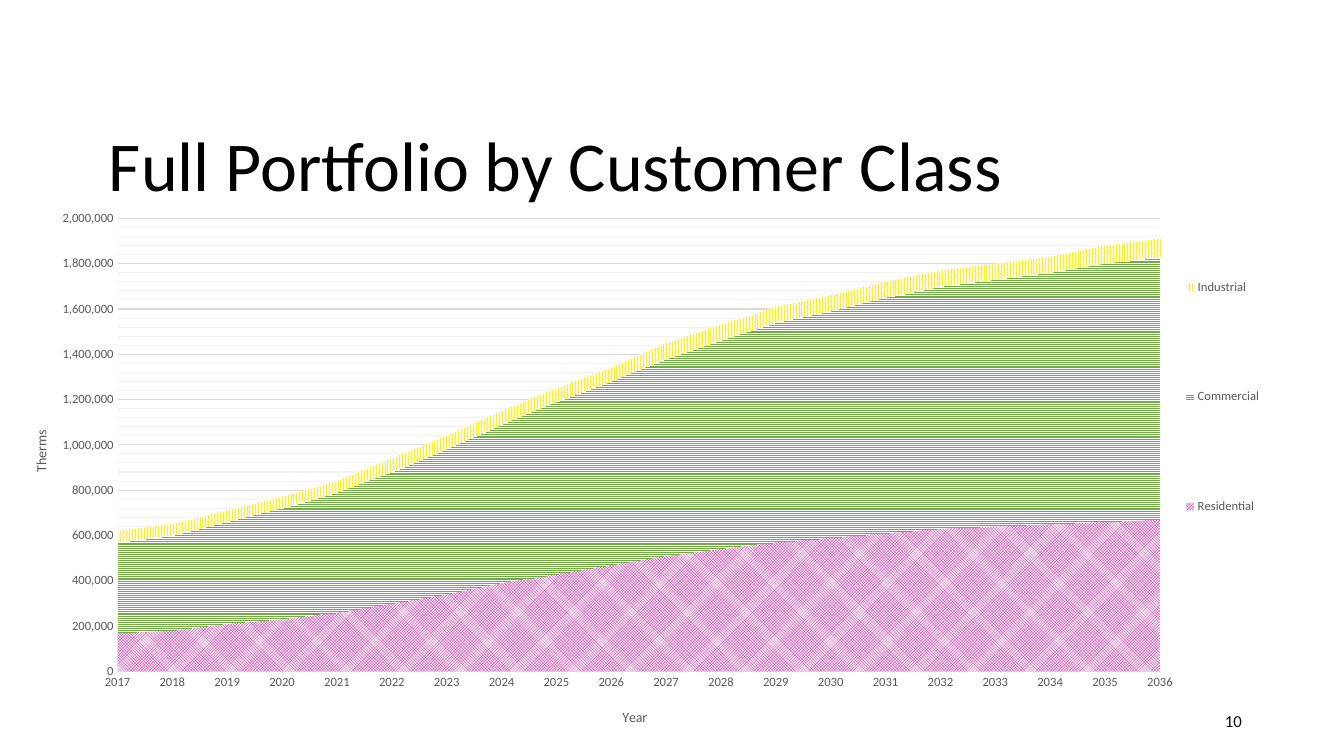
from dataclasses import dataclass

from lxml.etree import QName
from pptx import Presentation
from pptx.chart.data import CategoryChartData
from pptx.dml.color import RGBColor
from pptx.enum.chart import XL_CHART_TYPE, XL_LEGEND_POSITION, XL_TICK_MARK
from pptx.enum.dml import MSO_PATTERN
from pptx.enum.text import MSO_ANCHOR, MSO_AUTO_SIZE, PP_ALIGN
from pptx.oxml import parse_xml
from pptx.oxml.ns import nsdecls, qn
from pptx.util import Cm, Pt


@dataclass(frozen=True)
class Theme:
    """Hold the typeface, type sizes and colours of the slide."""

    font: str = "Calibri"
    title_size: int = 50
    number_size: int = 12
    chart_size: int = 10
    label_size: int = 9
    black: str = "000000"
    number: str = "0D0D0D"
    label: str = "595959"
    grid: str = "D9D9D9"
    minor_grid: str = "F2F2F2"
    white: str = "FFFFFF"
    residential: str = "C30199"
    commercial: str = "70AD47"
    industrial: str = "FDEE31"


THEME = Theme()
YEARS = [str(year) for year in range(2017, 2037)]
CLASSES = [
    ("Residential", MSO_PATTERN.SMALL_CHECKER_BOARD, THEME.residential,
     [170, 180, 210, 230, 260, 300, 340, 390, 430, 470,
      510, 540, 570, 590, 610, 630, 640, 650, 660, 670]),
    ("Commercial", MSO_PATTERN.NARROW_HORIZONTAL, THEME.commercial,
     [400, 420, 450, 490, 530, 580, 640, 700, 760, 810,
      870, 920, 970, 1000, 1040, 1070, 1090, 1110, 1140, 1160]),
    ("Industrial", MSO_PATTERN.PERCENT_80, THEME.industrial,
     [50] * 5 + [60] * 5 + [70] * 8 + [80] * 2),
]


def style_font(font, size, color):
    """Set typeface, size and colour of a font."""
    font.name = THEME.font
    font.size = Pt(size)
    font.bold = False
    font.color.rgb = RGBColor.from_string(color)


def style_line(line, color):
    """Give a chart line its colour and hairline width."""
    line.color.rgb = RGBColor.from_string(color)
    line.width = Pt(0.75)


def place(element, left, top, width=None, height=None, inner=False):
    """Give a chart part a manual layout in fractions of the chart."""
    for layout in element.findall(qn("c:layout")):
        element.remove(layout)
    target = '<c:layoutTarget val="inner"/>' if inner else ""
    modes = '<c:xMode val="edge"/><c:yMode val="edge"/>'
    sizes = [("x", left), ("y", top), ("w", width), ("h", height)]
    values = "".join(f'<c:{tag} val="{value}"/>' for tag, value in sizes if value is not None)
    layout = parse_xml(f'<c:layout {nsdecls("c")}><c:manualLayout>{target}{modes}{values}'
                       '</c:manualLayout></c:layout>')
    overlay = [child for child in element if QName(child).localname == "overlay"]
    if overlay:
        overlay[0].addprevious(layout)
    else:
        element.insert(0, layout)


def add_title(page, text):
    """Fill, move and format the title placeholder."""
    title = page.shapes.title
    title.left, title.top, title.width, title.height = Cm(2.49), Cm(1.98), Cm(25.5), Cm(3.35)
    frame = title.text_frame
    frame.text = text
    frame.auto_size = MSO_AUTO_SIZE.NONE
    frame.vertical_anchor = MSO_ANCHOR.BOTTOM
    para = frame.paragraphs[0]
    para.alignment = PP_ALIGN.LEFT
    para.line_spacing = 0.9
    style_font(para.font, THEME.title_size, THEME.black)


def add_page_number(page, number):
    """Add the page number at the lower right."""
    box = page.shapes.add_textbox(Cm(23.93), Cm(17.65), Cm(7.62), Cm(1.02))
    frame = box.text_frame
    frame.word_wrap = True
    frame.vertical_anchor = MSO_ANCHOR.MIDDLE
    para = frame.paragraphs[0]
    para.text = number
    para.alignment = PP_ALIGN.RIGHT
    style_font(para.font, THEME.number_size, THEME.number)


def style_axis(axis, title, left, top, rotation=0):
    """Format an axis and place its title."""
    axis.major_tick_mark = axis.minor_tick_mark = XL_TICK_MARK.NONE
    style_font(axis.tick_labels.font, THEME.label_size, THEME.label)
    frame = axis.axis_title.text_frame
    frame.text = title
    style_font(frame.paragraphs[0].font, THEME.chart_size, THEME.label)
    body = axis.axis_title._element.find(".//" + qn("a:bodyPr"))
    body.set("rot", str(rotation * 60000))
    body.set("vert", "horz")
    place(axis.axis_title._element, left, top)


def style_minor_gridlines(axis):
    """Colour the minor gridlines of an axis."""
    axis.has_minor_gridlines = True
    gridlines = axis._element.find(qn("c:minorGridlines"))
    gridlines.append(parse_xml(
        f'<c:spPr {nsdecls("c", "a")}><a:ln w="{Pt(0.75)}"><a:solidFill>'
        f'<a:srgbClr val="{THEME.minor_grid}"/></a:solidFill></a:ln></c:spPr>'))


def style_value_axis(axis):
    """Set the scale, number format and gridlines of the therms axis."""
    axis.minimum_scale, axis.maximum_scale = 0, 2000000
    axis.major_unit, axis.minor_unit = 200000, 40000
    axis.tick_labels.number_format = "#,##0"
    axis.tick_labels.number_format_is_linked = False
    axis.has_major_gridlines = True
    style_line(axis.major_gridlines.format.line, THEME.grid)
    style_minor_gridlines(axis)
    axis.format.line.fill.background()
    axis._element.find(qn("c:crossBetween")).set("val", "midCat")


def style_legend(chart):
    """Show the legend at the right, spread over the chart's height."""
    chart.has_legend = True
    legend = chart.legend
    legend.position = XL_LEGEND_POSITION.RIGHT
    legend.include_in_layout = False
    style_font(legend.font, THEME.label_size, THEME.label)
    place(legend._element, 0.92, 0.03, 0.08, 0.75)


def add_area_chart(page):
    """Add the stacked areas of therms by customer class."""
    data = CategoryChartData(number_format="#,##0")
    data.categories = YEARS
    for name, _, _, thousands in CLASSES:
        data.add_series(name, [value * 1000 for value in thousands])
    chart = page.shapes.add_chart(XL_CHART_TYPE.AREA_STACKED, Cm(0.43), Cm(4.22),
                                  Cm(31.65), Cm(14.27), data).chart
    chart.has_title = False
    style_font(chart.font, THEME.chart_size, THEME.black)
    for series, (_, pattern, color, _) in zip(chart.plots[0].series, CLASSES):
        fill = series.format.fill
        fill.patterned()
        fill.pattern = pattern
        fill.fore_color.rgb = RGBColor.from_string(color)
        fill.back_color.rgb = RGBColor.from_string(THEME.white)
        series.format.line.fill.background()
    style_axis(chart.category_axis, "Year", 0.48, 0.95)
    style_line(chart.category_axis.format.line, THEME.grid)
    style_axis(chart.value_axis, "Therms", 0.01, 0.46, rotation=-90)
    style_value_axis(chart.value_axis)
    style_legend(chart)
    plot_area = chart._chartSpace.find(".//" + qn("c:plotArea"))
    place(plot_area, 0.08, 0.09, 0.83, 0.8, inner=True)


def main():
    """Build and save the deck."""
    deck = Presentation()
    deck.slide_width, deck.slide_height = Cm(33.87), Cm(19.05)
    page = deck.slides.add_slide(deck.slide_layouts[5])
    add_title(page, "Full Portfolio by Customer Class")
    add_page_number(page, "10")
    add_area_chart(page)
    deck.save("out.pptx")


if __name__ == "__main__":
    main()
